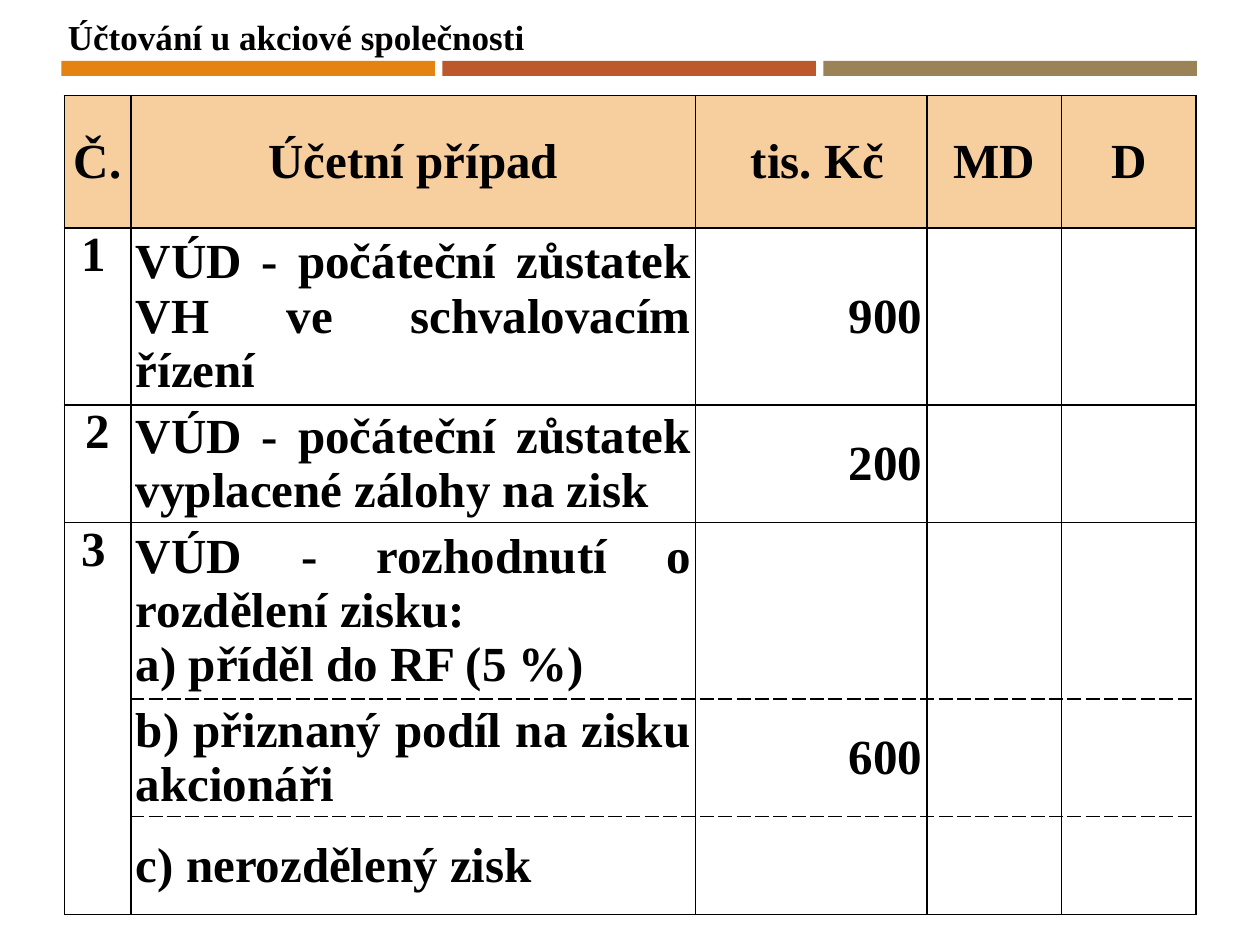
import pptx
import pptx.util
import pptx.dml.color
import pptx.enum.shapes
import pptx.enum.text
import pptx.oxml
import pptx.oxml.ns

Cm = pptx.util.Cm
ALIGN = pptx.enum.text.PP_ALIGN
ANCHOR = pptx.enum.text.MSO_ANCHOR

BAR_COLORS = ["E48312", "BD582C", "9B8357"]
COLS = [1.34, 11.38, 4.67, 2.71, 2.71]
HEIGHTS = [2.67, 3.56, 2.37, 3.56, 2.37, 1.98]
HEADER = ["Č.", "Účetní případ", " tis. Kč", "MD", "D"]
ROWS = [
    [" 1", "VÚD - počáteční zůstatek VH ve schvalovacím řízení", "900"],
    ["2", "VÚD - počáteční zůstatek vyplacené zálohy na zisk", "200"],
    [" 3", "VÚD - rozhodnutí o rozdělení zisku:\na) příděl do RF (5 %)", ""],
    ["", "b) přiznaný podíl na zisku akcionáři", "600"],
    ["", "c) nerozdělený zisk", ""],
]
BODY_ALIGN = [ALIGN.LEFT, ALIGN.JUSTIFY, ALIGN.RIGHT, ALIGN.CENTER, ALIGN.CENTER]
MARGINS = {"margin_left": Cm(0.1), "margin_right": Cm(0.1),
           "margin_top": 0, "margin_bottom": 0}


def rgb(color):
    return pptx.dml.color.RGBColor.from_string(color)


def write(tf, text, size, align):
    tf.text = text
    fmt = {"name": "Times New Roman", "size": pptx.util.Pt(size), "bold": True}
    for p in tf.paragraphs:
        p.alignment = align
        for r in p.runs:
            for key, value in fmt.items():
                setattr(r.font, key, value)
            r.font.color.rgb = rgb("000000")


def add_title(s, x, y, w, h):
    tf = s.shapes.add_textbox(Cm(x), Cm(y), Cm(w), Cm(h)).text_frame
    tf.word_wrap = False
    write(tf, "Účtování u akciové společnosti", 20, ALIGN.LEFT)


def add_bars(s, x, y, w, h, gap=0.15):
    n = len(BAR_COLORS)
    bar_w = (w - gap * (n - 1)) / n
    for i, color in enumerate(BAR_COLORS):
        bar = s.shapes.add_shape(pptx.enum.shapes.MSO_SHAPE.RECTANGLE,
                                 Cm(x + i * (bar_w + gap)), Cm(y), Cm(bar_w), Cm(h))
        bar.shadow.inherit = False
        bar.fill.solid()
        bar.fill.fore_color.rgb = rgb(color)
        bar.line.fill.background()


def set_borders(cell, dashed):
    tcPr = cell._tc.get_or_add_tcPr()
    for side in "LRTB":
        dash = "dash" if side in dashed else "solid"
        tcPr.append(pptx.oxml.parse_xml(
            f'<a:ln{side} {pptx.oxml.ns.nsdecls("a")} w="12700"><a:solidFill>'
            f'<a:srgbClr val="000000"/></a:solidFill><a:prstDash val="{dash}"/></a:ln{side}>'))


def add_entries(s, x, y):
    table = s.shapes.add_table(len(HEIGHTS), len(COLS), Cm(x), Cm(y),
                               Cm(sum(COLS)), Cm(sum(HEIGHTS))).table
    table.first_row = table.horz_banding = False
    for col, width in zip(table.columns, COLS):
        col.width = Cm(width)
    for row, height in zip(table.rows, HEIGHTS):
        row.height = Cm(height)
    for i, texts in enumerate([HEADER] + ROWS):
        for j in range(len(COLS)):
            cell = table.cell(i, j)
            for key, value in MARGINS.items():
                setattr(cell, key, value)
            cell.vertical_anchor = ANCHOR.TOP if i and j == 0 else ANCHOR.MIDDLE
            dashed = {3: "B", 4: "TB", 5: "T"}.get(i, "") if j else ""
            set_borders(cell, dashed)
            if i == 0:
                cell.fill.solid()
                cell.fill.fore_color.rgb = rgb("F7CE9D")
            else:
                cell.fill.background()
            if j < len(texts) and texts[j]:
                centred = i == 0 or (i, j) == (2, 0)
                write(cell.text_frame, texts[j], 28,
                      ALIGN.CENTER if centred else BODY_ALIGN[j])
    table.cell(3, 0).merge(table.cell(5, 0))


def main():
    prs = pptx.Presentation()
    prs.slide_width, prs.slide_height = Cm(25.4), Cm(19.05)
    s = prs.slides.add_slide(prs.slide_layouts[6])
    add_bars(s, 1.24, 1.23, 22.89, 0.3)
    add_entries(s, 1.3, 1.93)
    add_title(s, 1.12, 0.18, 9.78, 1.11)
    prs.save("out.pptx")


if __name__ == "__main__":
    main()
